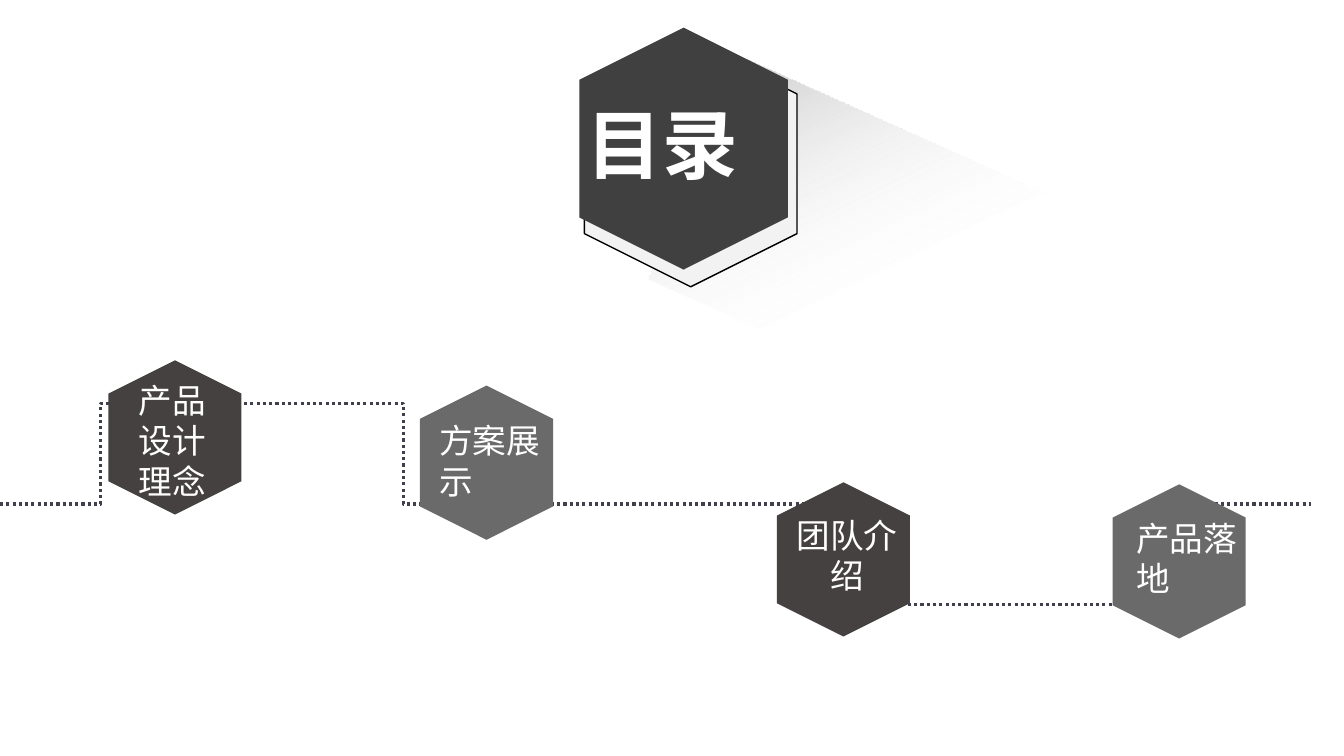
from dataclasses import dataclass

from lxml import etree
from pptx import Presentation
from pptx.dml.color import RGBColor
from pptx.enum.dml import MSO_LINE
from pptx.enum.shapes import MSO_SHAPE
from pptx.enum.text import MSO_ANCHOR, MSO_AUTO_SIZE, PP_ALIGN
from pptx.oxml import parse_xml
from pptx.oxml.ns import nsdecls, qn
from pptx.util import Inches, Pt

HEXAGON, RECT = MSO_SHAPE.HEXAGON, MSO_SHAPE.RECTANGLE
LEFT, CENTER, JUSTIFY = PP_ALIGN.LEFT, PP_ALIGN.CENTER, PP_ALIGN.JUSTIFY
DOTTED = MSO_LINE.ROUND_DOT
TOP, FIT = MSO_ANCHOR.TOP, MSO_AUTO_SIZE.SHAPE_TO_FIT_TEXT


@dataclass(frozen=True)
class Theme:
    font: str = "Noto Sans CJK SC"
    title_size: int = 54
    label_size: int = 24
    text: str = "FFFFFF"
    title_fill: str = "404040"
    back_fill: str = "F2F2F2"
    back_line: str = "000000"
    dark: str = "454141"
    grey: str = "6A6A6A"
    road: str = "3F404B"


THEME = Theme()
STOPS = ((0, "838383", 54), (0, "BFBFBF", 100), (54, "FFFFFF", 0))


def rgb(value):
    return RGBColor.from_string(value)


def inches(*values):
    return [Inches(v) for v in values]


def write(sp, text, size, align=LEFT, bold=False):
    tf = sp.text_frame
    tf.word_wrap = True
    tf.auto_size = FIT
    tf.vertical_anchor = TOP
    p = tf.paragraphs[0]
    p.alignment = align
    p.line_spacing = 1.0
    r = p.add_run()
    r.text = text
    font = r.font
    font.name, font.size, font.bold = THEME.font, Pt(size), bold
    font.color.rgb = rgb(THEME.text)
    ea = etree.SubElement(font._element, qn("a:ea"))
    ea.set("typeface", THEME.font)


def add_hexagon(s, x, y, w, h, fill, line=None):
    sp = s.shapes.add_shape(HEXAGON, *inches(x, y, w, h))
    sp.rotation = 90
    sp.shadow.inherit = False
    sp.fill.solid()
    sp.fill.fore_color.rgb = rgb(fill)
    if line:
        sp.line.color.rgb = rgb(line)
        sp.line.width = Pt(1)
    else:
        sp.line.fill.background()


def add_long_shadow(s, x, y, w, h):
    sp = s.shapes.add_shape(RECT, *inches(x, y, w, h))
    sp.rotation = 24.2
    sp.shadow.inherit = False
    sp.line.fill.background()
    stops = "".join(
        f'<a:gs pos="{pos * 1000}"><a:srgbClr val="{color}">'
        f'<a:alpha val="{alpha * 1000}"/></a:srgbClr></a:gs>'
        for pos, color, alpha in STOPS)
    grad = parse_xml(
        f'<a:gradFill {nsdecls("a")} rotWithShape="1"><a:gsLst>{stops}</a:gsLst>'
        f'<a:lin ang="{40 * 60000}" scaled="0"/></a:gradFill>')
    sp._element.spPr.find(qn("a:prstGeom")).addnext(grad)


def bezier(points, t):
    u = 1 - t
    weights = (u ** 3, 3 * u * u * t, 3 * u * t * t, t ** 3)
    return tuple(sum(k * pt[axis] for k, pt in zip(weights, points))
                 for axis in (0, 1))


def add_road(s, x, y, steps=30):
    knots = [(x + dx, y + dy) for dx, dy in (
        (0, 0.28), (1.24, -0.03), (2.71, -0.08), (4.35, 0.11), (5.98, 0.29),
        (8.31, 1.34), (9.83, 1.39), (11.36, 1.43), (13.01, 0.81), (13.38, 0.58))]
    points = [bezier(knots[i:i + 4], n / steps)
              for i in range(0, len(knots) - 1, 3) for n in range(1, steps + 1)]
    builder = s.shapes.build_freeform(*knots[0], scale=Inches(1))
    builder.add_line_segments(points, close=False)
    sp = builder.convert_to_shape()
    sp.shadow.inherit = False
    sp.fill.background()
    sp.line.color.rgb = rgb(THEME.road)
    sp.line.width = Pt(2.25)
    sp.line.dash_style = DOTTED


def add_heading(s, x, y, text):
    add_hexagon(s, x + 0.05, y + 0.13, 2.44, 2.11, THEME.back_fill, THEME.back_line)
    add_hexagon(s, x, y, 2.4, 2.07, THEME.title_fill)
    title = s.shapes.title
    title.left, title.top, title.width, title.height = inches(
        x + 0.14, y + 0.48, 2.1, 1.01)
    write(title, text, THEME.title_size, JUSTIFY, True)
    s.shapes._spTree.append(title._element)


def add_station(s, x, y, fill, text, label, align=LEFT):
    add_hexagon(s, x, y, 1.53, 1.32, fill)
    dx, dy, w, h = label
    box = s.shapes.add_textbox(*inches(x + dx, y + dy, w, h))
    write(box, text, THEME.label_size, align)


def build_contents(prs):
    s = prs.slides.add_slide(prs.slide_layouts[5])
    add_long_shadow(s, 6.72, 1.41, 4.51, 2.39)
    add_road(s, -0.03, 4.43)
    add_heading(s, 5.58, 0.44, "目录")
    add_station(s, 0.97, 3.68, THEME.dark, "产品设计理念", (0.31, 0.04, 0.91, 1.31))
    add_station(s, 4.06, 3.93, THEME.grey, "方案展示", (0.2, 0.19, 1.23, 0.91))
    add_station(s, 7.6, 4.89, THEME.dark, "团队介绍", (0.14, 0.17, 1.32, 0.91), CENTER)
    add_station(s, 10.93, 4.91, THEME.grey, "产品落地", (0.24, 0.18, 1.32, 0.91))


def main():
    prs = Presentation()
    prs.slide_width, prs.slide_height = inches(13.33, 7.5)
    build_contents(prs)
    prs.save("out.pptx")


if __name__ == "__main__":
    main()
